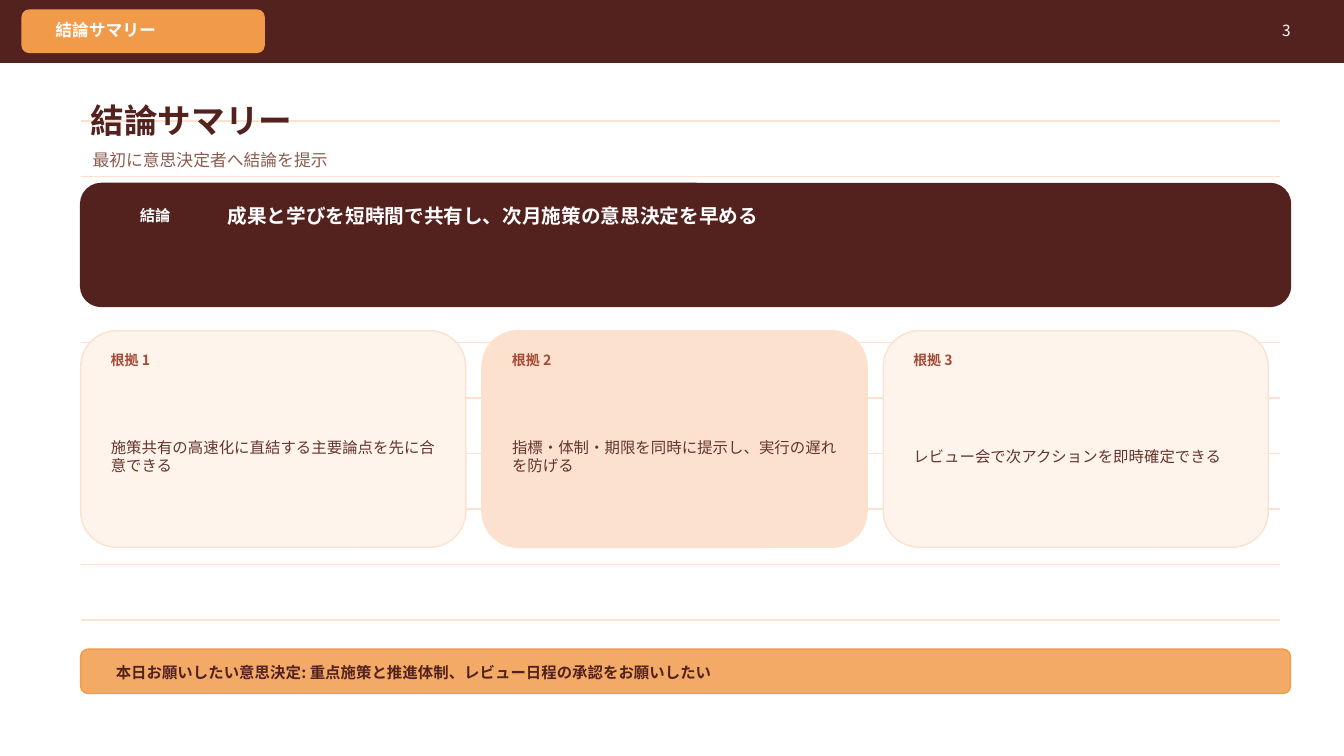
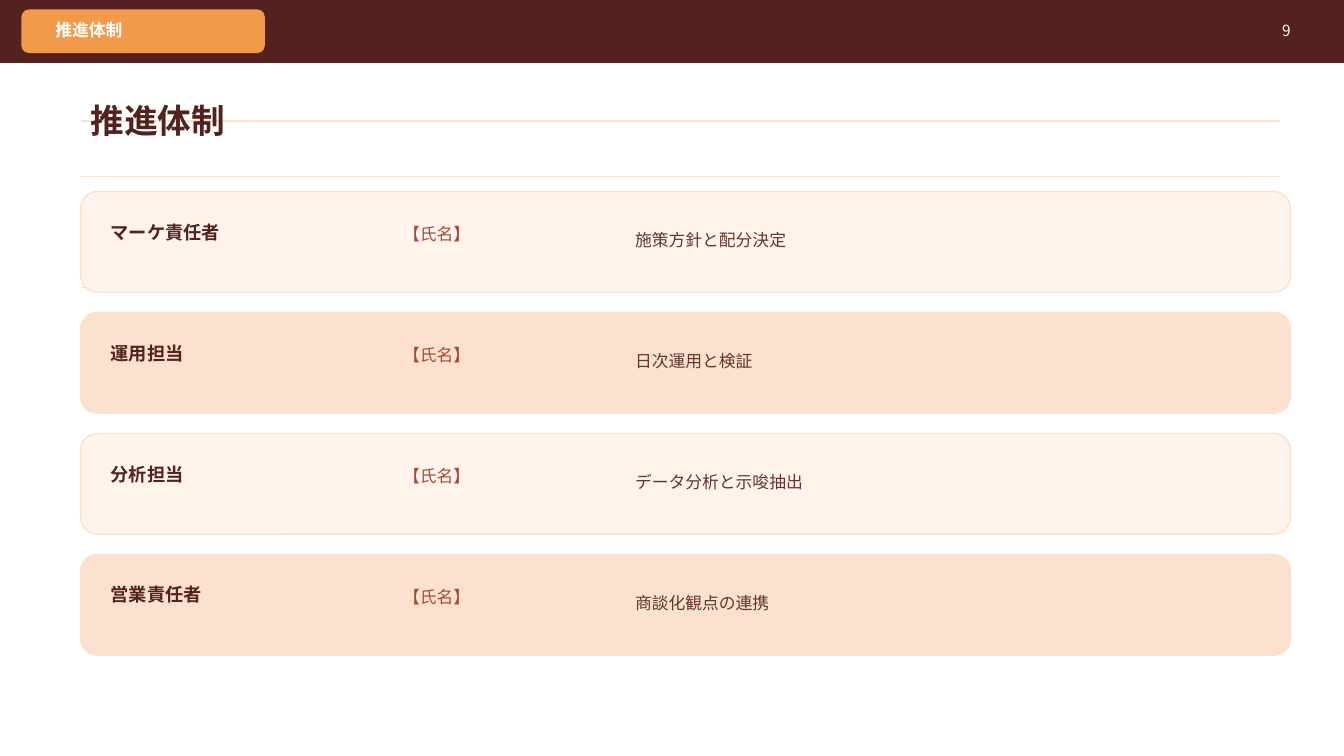
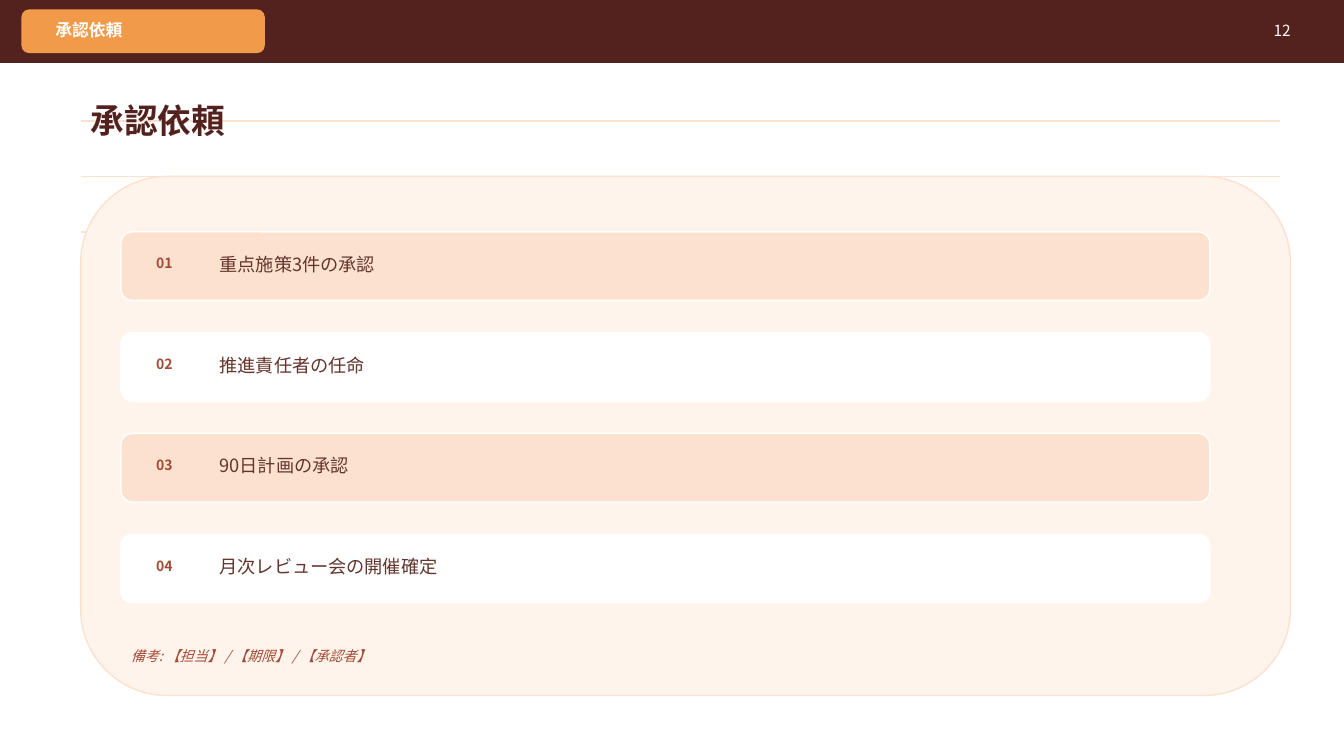
from dataclasses import dataclass

from lxml.etree import SubElement as Sub
from pptx import Presentation
from pptx.dml.color import RGBColor as Rgb
from pptx.enum.shapes import MSO_CONNECTOR as Link, MSO_SHAPE as Form
from pptx.enum.text import MSO_ANCHOR as Anchor, MSO_AUTO_SIZE as Fit, PP_ALIGN as Align
from pptx.oxml.ns import qn
from pptx.util import Inches, Pt


@dataclass(frozen=True)
class Theme:
    """Colours, fonts, type sizes and the grid step in inches."""
    dark: str = "53221E"
    gold: str = "F19A49"
    cream: str = "FFF4EC"
    peach: str = "FCE1CF"
    rust: str = "A54A35"
    body: str = "63352D"
    soft: str = "8A5B50"
    white: str = "FFFFFF"
    head: str = "Karla"
    text: str = "Noto Sans CJK JP"
    title: int = 24
    lead: int = 14
    large: int = 13
    base: int = 12
    small: int = 11
    tiny: int = 10
    line: int = 1
    step: float = 0.1


T = Theme()


@dataclass(frozen=True)
class Box:
    """A region in grid columns and rows."""
    x: float
    y: float
    w: float
    h: float

    def cut(self, x, y, w, h):
        """Return a box placed relative to this one."""
        return Box(self.x + x, self.y + y, w, h)

    def span(self):
        """Return left, top, width and height as lengths."""
        return [Inches(round(n * T.step, 2)) for n in (self.x, self.y, self.w, self.h)]


PAGE = Box(0, 0, 133.3, 75)
MAIN = PAGE.cut(8, 9.5, 120, 59.5)


def style(frame, words, size, color, bold=False, slant=False, align=Align.LEFT, face=T.text):
    """Fill a text frame with one formatted paragraph."""
    frame.word_wrap = True
    frame.auto_size = Fit.NONE
    frame.vertical_anchor = Anchor.MIDDLE
    frame.text = words
    para = frame.paragraphs[0]
    para.alignment = align
    font = para.font
    font.name, font.size, font.bold, font.italic = face, Pt(size), bold, slant
    font.color.rgb = Rgb.from_string(color)
    props = para._p.pPr.find(qn("a:defRPr"))
    Sub(props, qn("a:ea")).set("typeface", T.text)


def write(slide, box, words, size, color, **look):
    """Add a text box."""
    style(slide.shapes.add_textbox(*box.span()).text_frame, words, size, color, **look)


def panel(slide, box, fill, edge=None, form=Form.ROUNDED_RECTANGLE, alpha=None):
    """Add a filled and outlined shape."""
    shape = slide.shapes.add_shape(form, *box.span())
    shape.shadow.inherit = False
    shape.fill.solid()
    shape.fill.fore_color.rgb = Rgb.from_string(fill)
    shape.line.color.rgb = Rgb.from_string(edge or fill)
    shape.line.width = Pt(T.line)
    if alpha:
        tint = shape.element.xpath("p:spPr/a:solidFill/a:srgbClr")[0]
        Sub(tint, qn("a:alpha")).set("val", str(alpha * 1000))


def rules(slide, box, count):
    """Draw evenly spaced lines across a box."""
    for i in range(count):
        x, y, w, _ = box.cut(0, i * box.h / (count - 1), box.w, 0).span()
        rule = slide.shapes.add_connector(Link.STRAIGHT, x, y, x + w, y)
        rule.line.color.rgb = Rgb.from_string(T.peach)
        rule.line.width = Pt(T.line)
        Sub(rule.element.spPr, qn("a:effectLst"))


def band(slide, box, name, num):
    """Draw the top band with its tag and page number."""
    panel(slide, box, T.dark, form=Form.RECTANGLE)
    panel(slide, box.cut(2.2, 1, 24, 4.2), T.gold)
    write(slide, box.cut(4.5, 1.8, 88, 2.4), name, T.base, T.white, bold=True)
    write(slide, box.cut(121.5, 1.8, 7.5, 2.4), num, T.small, T.white, align=Align.RIGHT)


def start(deck, name, num):
    """Add a slide with rules, band and title."""
    slide = deck.slides.add_slide(deck.slide_layouts[5])
    rules(slide, MAIN.cut(0, 2.5, 119, 49.5), 10)
    band(slide, PAGE.cut(0, 0, PAGE.w, 6.2), name, num)
    title = slide.shapes.title
    title.left, title.top, title.width, title.height = MAIN.cut(0, 0, 114, 4.8).span()
    style(title.text_frame, name, T.title, T.dark, bold=True, face=T.head)
    tree = title.element.getparent()
    tree.append(title.element)
    return slide


def claim(slide, box, tag, words):
    """Draw the conclusion banner."""
    panel(slide, box, T.dark)
    write(slide, box.cut(2.4, 2, 10, 2.4), tag, T.small, T.white, bold=True, align=Align.CENTER)
    write(slide, box.cut(13.6, 1.6, 104, 3.2), words, T.lead, T.white, bold=True)


def cards(slide, box, items, gap):
    """Draw a row of reason cards."""
    wide = (box.w - gap * (len(items) - 1)) / len(items)
    for i, words in enumerate(items):
        card = box.cut(i * (wide + gap), 0, wide, box.h)
        panel(slide, card, (T.cream, T.peach)[i % 2], T.peach)
        write(slide, card.cut(2, 1.8, 9, 2.2), f"根拠 {i + 1}", T.tiny, T.rust, bold=True)
        write(slide, card.cut(2, 5, wide - 4, 15), words, T.small, T.body)


def ask(slide, box, words):
    """Draw the request bar."""
    panel(slide, box, T.gold, alpha=84)
    write(slide, box.cut(2.5, 1.2, 115, 2.2), words, T.small, T.dark, bold=True)


def team(slide, box, items, pitch):
    """Draw one row for each role."""
    for i, (role, name, duty) in enumerate(items):
        row = box.cut(0, i * pitch, box.w, box.h)
        panel(slide, row, (T.cream, T.peach)[i % 2], T.peach)
        write(slide, row.cut(2, 2.8, 27, 2.4), role, T.large, T.dark, bold=True)
        write(slide, row.cut(31, 3, 21, 2.4), name, T.base, T.rust)
        write(slide, row.cut(54, 2.5, 62, 4.5), duty, T.base, T.body)


def votes(slide, box, items, note, pitch):
    """Draw the numbered approvals and their note."""
    panel(slide, box, T.cream, T.peach)
    for i, words in enumerate(items):
        row = box.cut(4, 5.5 + i * pitch, 108, 6.8)
        panel(slide, row, (T.peach, T.white)[i % 2], T.white)
        write(slide, row.cut(2.5, 2.1, 4.4, 2), f"{i + 1:02}", T.tiny, T.rust, bold=True)
        write(slide, row.cut(8.8, 2, 96, 2.4), words, T.large, T.body)
    write(slide, box.cut(4, 46.5, 68, 2.2), note, T.tiny, T.rust, slant=True)


def main():
    """Build and save the deck."""
    deck = Presentation()
    deck.slide_width, deck.slide_height = PAGE.span()[2:]

    slide = start(deck, "結論サマリー", "3")
    write(slide, MAIN.cut(0.2, 4.9, 112, 3), "最初に意思決定者へ結論を提示", T.base, T.soft)
    claim(slide, MAIN.cut(0, 8.7, MAIN.w, 12.2), "結論",
          "成果と学びを短時間で共有し、次月施策の意思決定を早める")
    cards(slide, MAIN.cut(0, 23.3, 117.8, 21.5), [
        "施策共有の高速化に直結する主要論点を先に合意できる",
        "指標・体制・期限を同時に提示し、実行の遅れを防げる",
        "レビュー会で次アクションを即時確定できる",
    ], 1.6)
    ask(slide, MAIN.cut(0, 54.9, MAIN.w, 4.4),
        "本日お願いしたい意思決定: 重点施策と推進体制、レビュー日程の承認をお願いしたい")

    slide = start(deck, "推進体制", "9")
    team(slide, MAIN.cut(0, 9.5, MAIN.w, 10), [
        ("マーケ責任者", "【氏名】", "施策方針と配分決定"),
        ("運用担当", "【氏名】", "日次運用と検証"),
        ("分析担当", "【氏名】", "データ分析と示唆抽出"),
        ("営業責任者", "【氏名】", "商談化観点の連携"),
    ], 12)

    slide = start(deck, "承認依頼", "12")
    votes(slide, MAIN.cut(0, 8, MAIN.w, 51.5), [
        "重点施策3件の承認",
        "推進責任者の任命",
        "90日計画の承認",
        "月次レビュー会の開催確定",
    ], "備考: 【担当】 / 【期限】 / 【承認者】", 10)

    deck.save("out.pptx")


if __name__ == "__main__":
    main()
